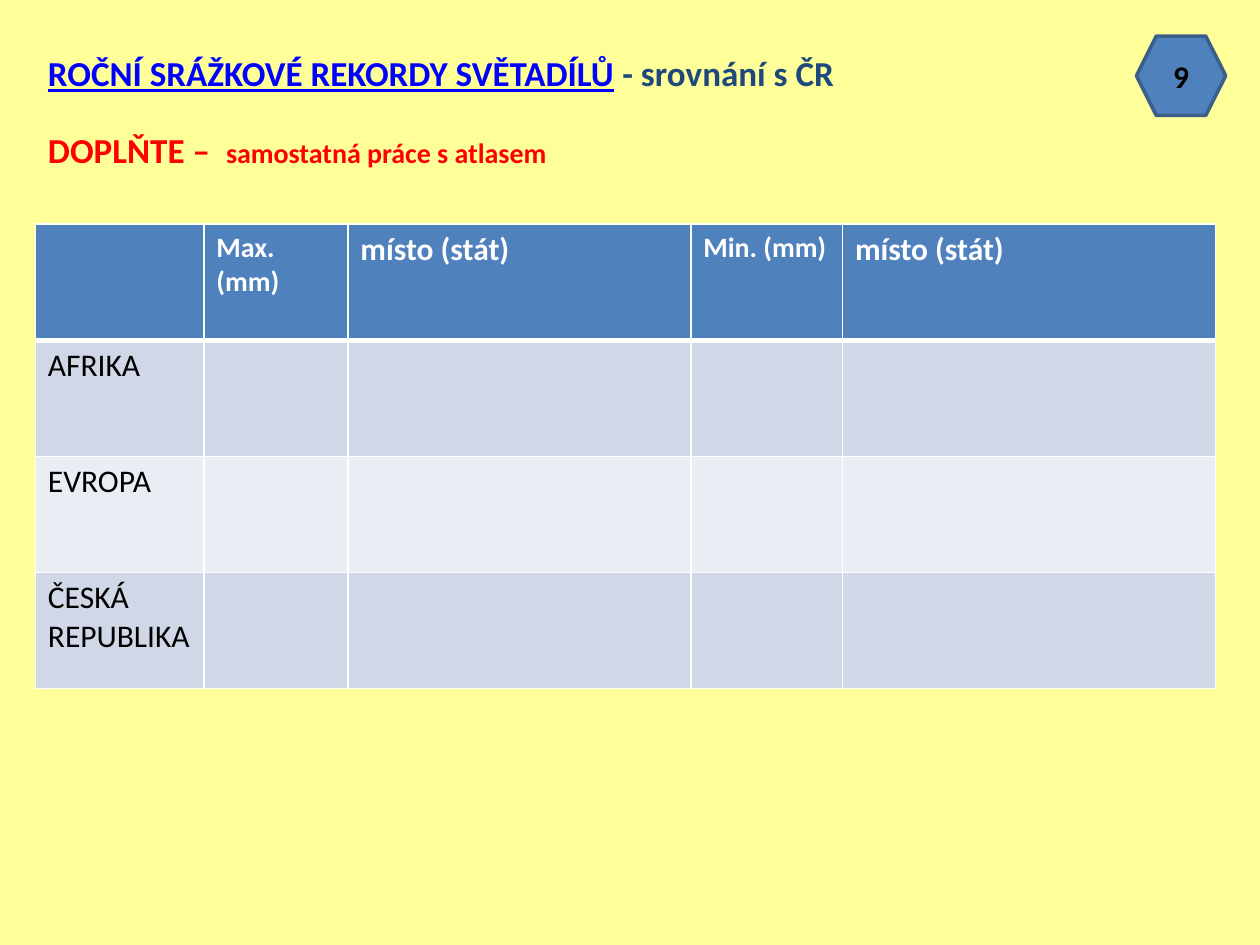
"""Build a worksheet slide on annual precipitation records of the continents."""
from lxml import etree
from pptx import Presentation
from pptx import util as u
from pptx.dml.color import RGBColor
from pptx.enum import shapes, text
from pptx.oxml.ns import qn

YELLOW = RGBColor(0xFF, 0xFF, 0x99)
LINK_BLUE = RGBColor(0x00, 0x00, 0xFF)
RED = RGBColor(0xFF, 0x00, 0x00)
NAVY = RGBColor(0x1F, 0x49, 0x7D)
BLUE = RGBColor(0x4F, 0x81, 0xBD)
OUTLINE = RGBColor(0x3A, 0x5F, 0x8C)
WHITE = RGBColor(0xFF, 0xFF, 0xFF)
BLACK = RGBColor(0x00, 0x00, 0x00)
BANDS = [RGBColor(0xD0, 0xD8, 0xE8), RGBColor(0xE9, 0xED, 0xF4)]
FONT = "Calibri"

HEADING = [
    [("ROČNÍ SRÁŽKOVÉ REKORDY SVĚTADÍLŮ", 20, LINK_BLUE, True),
     (" ", 20, RED, False),
     ("- srovnání s ČR", 20, NAVY, False)],
    [("DOPLŇTE –", 20, RED, False),
     (" ", 40, RED, False),
     ("samostatná práce s atlasem", 16, RED, False)],
]
COLUMNS = [("", 18, 96.3), ("Max. (mm)", 16, 82.3), ("místo (stát)", 18, 196),
           ("Min. (mm)", 16, 86.6), ("místo (stát)", 18, 213.1)]
REGIONS = ["AFRIKA", "EVROPA", "ČESKÁ\nREPUBLIKA"]
PAGE_NUMBER = "9"
LEFT = 20.2
ROW_HEIGHT = 66.4


def set_font(font, size, color, bold):
    font.name, font.size, font.bold = FONT, u.Pt(size), bold
    font.color.rgb = color


def add_heading(page):
    title = page.shapes.title
    title.left, title.top, title.width, title.height = map(u.Pt, (LEFT, 26, 584, 104))
    frame = title.text_frame
    frame.word_wrap = True
    frame.auto_size = text.MSO_AUTO_SIZE.NONE
    frame.vertical_anchor = text.MSO_ANCHOR.TOP
    for index, spans in enumerate(HEADING):
        para = frame.add_paragraph() if index else frame.paragraphs[0]
        para.alignment = text.PP_ALIGN.LEFT
        for wording, size, color, underline in spans:
            span = para.add_run()
            span.text = wording
            set_font(span.font, size, color, True)
            span.font.underline = underline


def add_border(cell, side, width):
    line = etree.SubElement(cell._tc.get_or_add_tcPr(), qn(f"a:ln{side}"), w=str(u.Pt(width)))
    fill = etree.SubElement(line, qn("a:solidFill"))
    etree.SubElement(fill, qn("a:srgbClr"), val=str(WHITE))


def fill_cell(cell, wording, size, color, bold, background, top, bottom):
    cell.text = wording
    for para in cell.text_frame.paragraphs:
        set_font(para.font, size, color, bold)
    for side, width in (("L", 1), ("R", 1), ("T", top), ("B", bottom)):
        add_border(cell, side, width)
    cell.fill.solid()
    cell.fill.fore_color.rgb = background


def add_records_table(page):
    width = sum(column[2] for column in COLUMNS)
    rows = len(REGIONS) + 1
    table = page.shapes.add_table(rows, len(COLUMNS), u.Pt(LEFT), u.Pt(128),
                                  u.Pt(width), u.Pt(rows * ROW_HEIGHT)).table
    for row in table.rows:
        row.height = u.Pt(ROW_HEIGHT)
    for col, (label, size, column_width) in enumerate(COLUMNS):
        table.columns[col].width = u.Pt(column_width)
        fill_cell(table.cell(0, col), label, size, WHITE, True, BLUE, 1, 3)
        for row, region in enumerate(REGIONS, 1):
            wording = "" if col else region
            fill_cell(table.cell(row, col), wording, 18, BLACK, False,
                      BANDS[(row - 1) % 2], 3 if row == 1 else 1, 1)


def add_page_badge(page):
    badge = page.shapes.add_shape(shapes.MSO_SHAPE.HEXAGON, u.Pt(649.4), u.Pt(20.6),
                                  u.Pt(51), u.Pt(45.4))
    badge.shadow.inherit = False
    badge.fill.solid()
    badge.fill.fore_color.rgb = BLUE
    badge.line.color.rgb = OUTLINE
    badge.line.width = u.Pt(2)
    badge.text_frame.text = PAGE_NUMBER
    badge.text_frame.vertical_anchor = text.MSO_ANCHOR.MIDDLE
    para = badge.text_frame.paragraphs[0]
    para.alignment = text.PP_ALIGN.CENTER
    set_font(para.font, 18, BLACK, True)


def main():
    deck = Presentation()
    deck.slide_width, deck.slide_height = u.Pt(720), u.Pt(540)
    page = deck.slides.add_slide(deck.slide_layouts.get_by_name("Title Only"))
    page.background.fill.solid()
    page.background.fill.fore_color.rgb = YELLOW
    add_records_table(page)
    add_heading(page)
    add_page_badge(page)
    deck.save("out.pptx")


if __name__ == "__main__":
    main()
